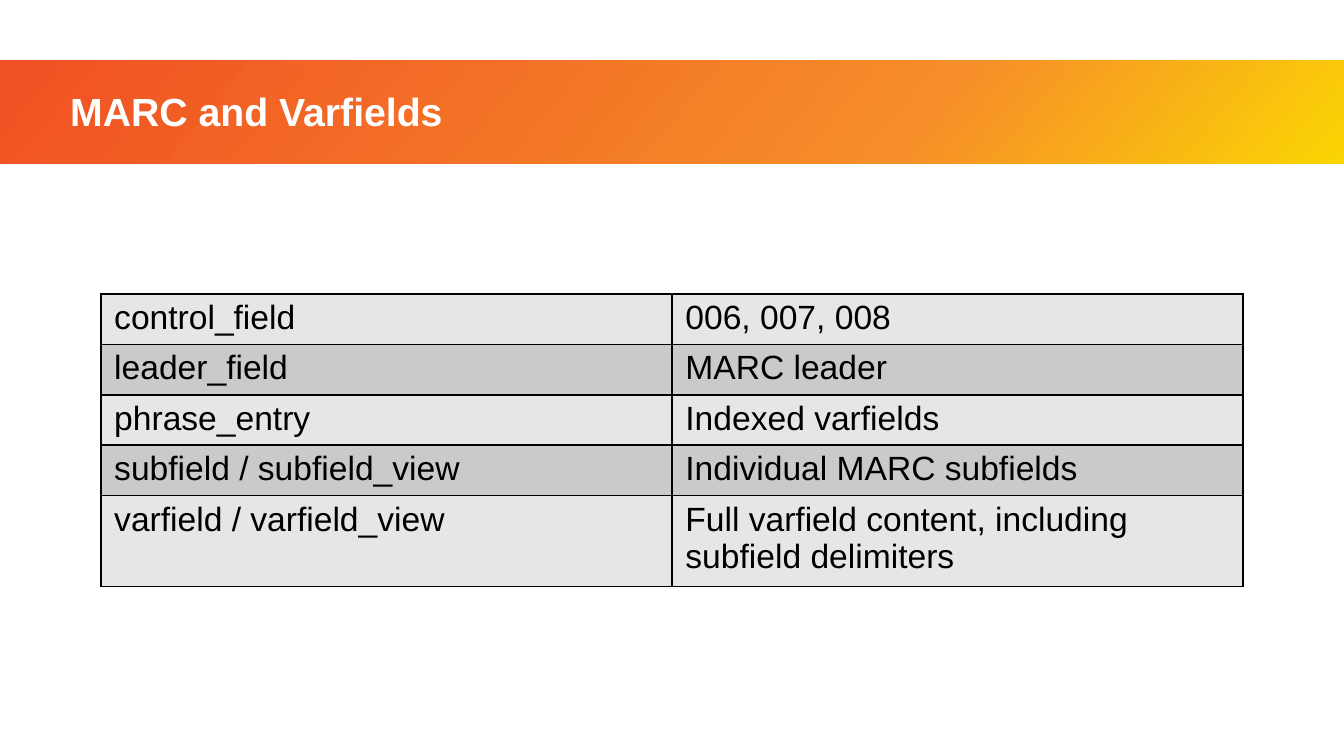
from copy import deepcopy

from lxml import etree
from pptx import Presentation
from pptx.dml import color
from pptx.enum import shapes, text
from pptx.oxml import ns
from pptx.util import Pt


def rgb(value):
    return color.RGBColor.from_string(value)


def write(paragraph, words, style):
    run = paragraph.add_run()
    run.text = words
    for name, value in style.items():
        setattr(run.font, name, value)


deck = Presentation()
deck.slide_width, deck.slide_height = Pt(720), Pt(405)
slide = deck.slides.add_slide(deck.slide_layouts[6])

# Gradient band behind the title
band = slide.shapes.add_shape(
    shapes.MSO_SHAPE.RECTANGLE, Pt(0), Pt(32.2), Pt(720), Pt(55.6))
band.shadow.inherit = False
band.line.fill.background()
band.fill.gradient()
band.fill.gradient_angle = 320
stop_list = band.fill._xPr.find(".//" + ns.qn("a:gsLst"))
stop_list.append(deepcopy(stop_list[0]))
band_colours = [(0, "F05023"), (0.68, "F68E29"), (1, "FBD504")]
for stop, (position, shade) in zip(band.fill.gradient_stops, band_colours):
    stop.position = position
    stop.color.rgb = rgb(shade)

# Title
title = slide.shapes.add_textbox(Pt(30.5), Pt(39.4), Pt(654.5), Pt(43.2)).text_frame
title.word_wrap = True
title.vertical_anchor = text.MSO_ANCHOR.MIDDLE
title.paragraphs[0].line_spacing = 0.9
write(title.paragraphs[0], "MARC and Varfields",
      {"name": "Arial", "size": Pt(21), "bold": True, "color.rgb": None} and
      {"name": "Arial", "size": Pt(21), "bold": True})
title.paragraphs[0].runs[0].font.color.rgb = rgb("FFFFFF")

# Table of MARC fields
fields = [
    ("control_field", "006, 007, 008"),
    ("leader_field", "MARC leader"),
    ("phrase_entry", "Indexed varfields"),
    ("subfield / subfield_view", "Individual MARC subfields"),
    ("varfield / varfield_view",
     "Full varfield content, including subfield delimiters"),
]
row_heights = [25.6] * 4 + [45.6]
stripes = ["E6E6E6", "CACACA"]
table = slide.shapes.add_table(
    len(fields), 2, Pt(54), Pt(157.5), Pt(612), Pt(sum(row_heights))).table
cell_format = {"margin_left": Pt(7.2), "margin_right": Pt(7.2),
               "margin_top": Pt(2.7), "margin_bottom": Pt(2.7)}

for r, (entry, height) in enumerate(zip(fields, row_heights)):
    table.rows[r].height = Pt(height)
    for c, words in enumerate(entry):
        cell = table.cell(r, c)
        for name, value in cell_format.items():
            setattr(cell, name, value)
        cell.fill.solid()
        cell.fill.fore_color.rgb = rgb(stripes[r % 2])
        write(cell.text_frame.paragraphs[0], words,
              {"name": "Arial", "size": Pt(18), "bold": False})
        cell.text_frame.paragraphs[0].runs[0].font.color.rgb = rgb("000000")
        # Black border on all four sides, placed ahead of the fill
        for i, side in enumerate(["a:lnL", "a:lnR", "a:lnT", "a:lnB"]):
            border = etree.Element(ns.qn(side), w=str(Pt(1)))
            solid = etree.SubElement(border, ns.qn("a:solidFill"))
            etree.SubElement(solid, ns.qn("a:srgbClr"), val="000000")
            cell._tc.get_or_add_tcPr().insert(i, border)

deck.save("out.pptx")
